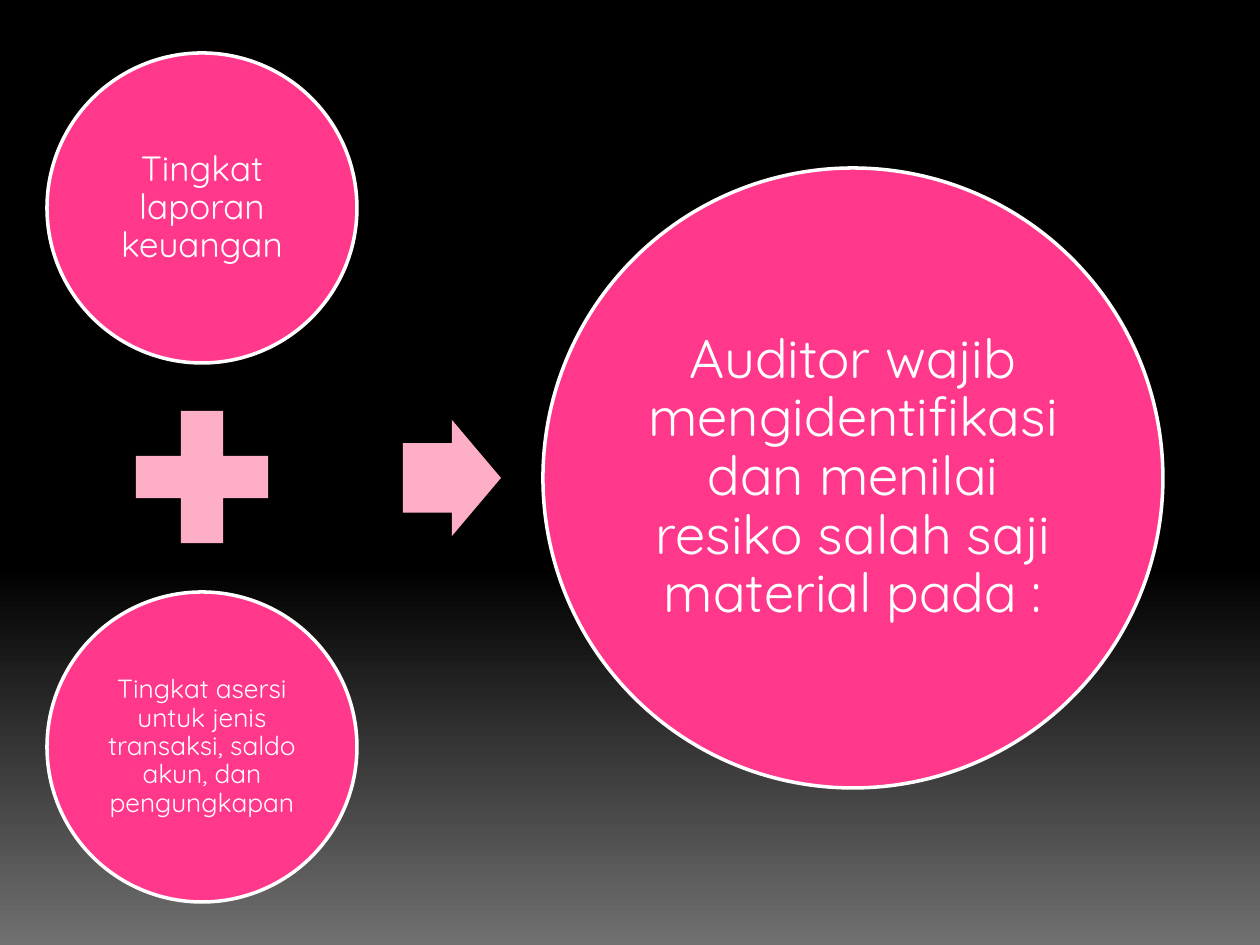
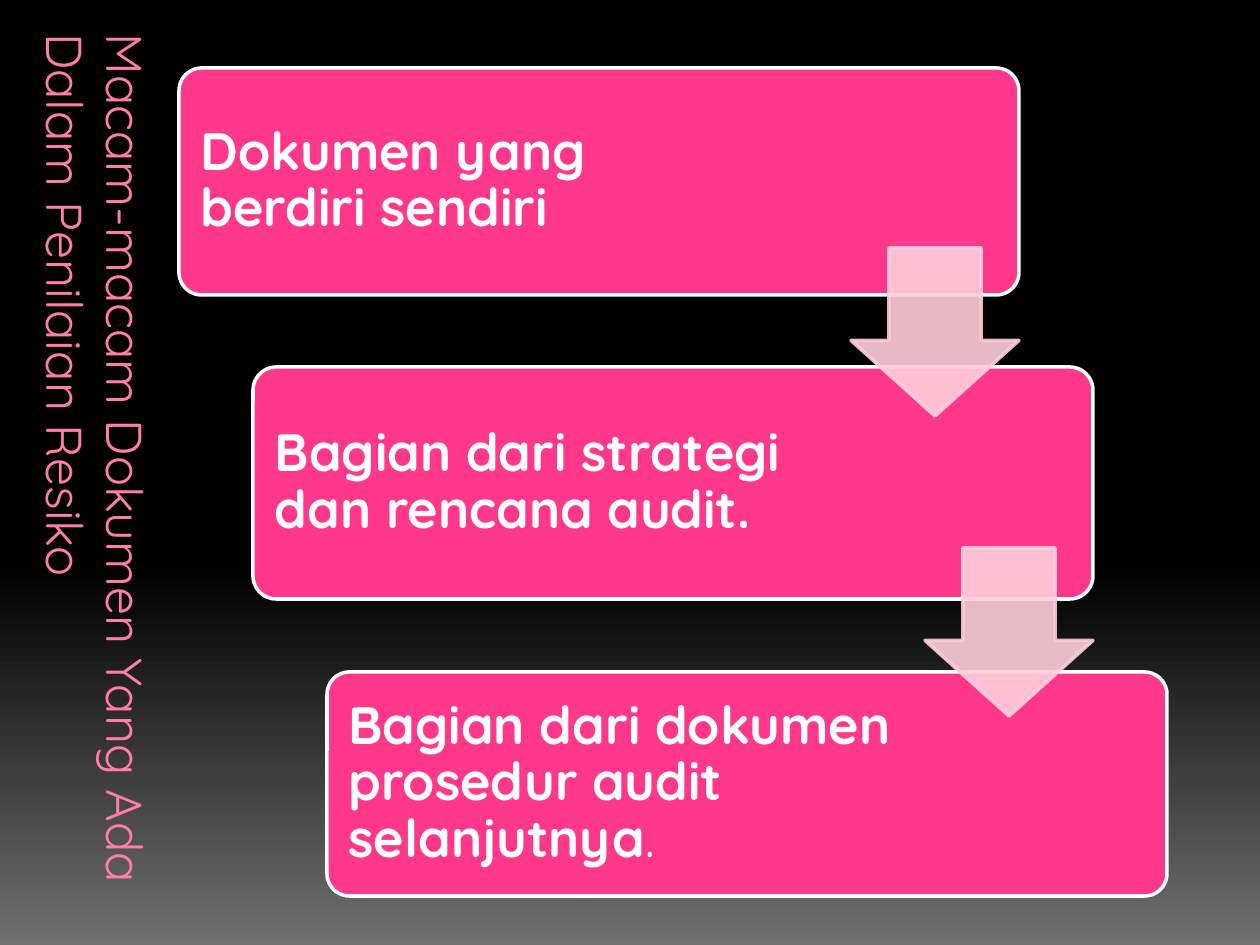
from lxml import etree
from pptx import Presentation
from pptx import util as u
from pptx.dml.color import RGBColor
from pptx.enum import shapes, text
from pptx.oxml import ns

SCALE = 914400 / 126
FONT = "Quicksand"
COLORS = {
    "black": "000000",
    "grey": "707070",
    "pink": "FF388C",
    "white": "FFFFFF",
    "operator": "FFAFC5",
    "down_arrow": "FFCEDA",
    "title": "FF7DA7",
    "title_outline": "B12761",
}
SHAPE = shapes.MSO_SHAPE


def px(n):
    return u.Emu(round(n * SCALE))


def rgb(name):
    return RGBColor.from_string(COLORS[name])


def add_slide(prs):
    """Add a blank slide that fades from black to grey at its foot."""
    s = prs.slides.add_slide(prs.slide_layouts[6])
    fill = s.background.fill
    fill.gradient()
    fill.gradient_angle = 270
    for stop, (position, color) in zip(fill.gradient_stops, [(0.6, "black"), (1, "grey")]):
        stop.position = position
        stop.color.rgb = rgb(color)
    return s


def add_shape(s, kind, x, y, w, h, fill, line=None, adj=()):
    sp = s.shapes.add_shape(kind, px(x), px(y), px(w), px(h))
    sp.shadow.inherit = False
    sp.fill.solid()
    sp.fill.fore_color.rgb = rgb(fill)
    if line:
        sp.line.color.rgb = rgb(line)
        sp.line.width = u.Pt(2)
    else:
        sp.line.fill.background()
    for i, value in enumerate(adj):
        sp.adjustments[i] = value
    return sp


def write(sp, runs, size, color, align, anchor, margins=None, spacing=None):
    """Fill a shape with one paragraph; runs are (text, bold) pairs."""
    tf = sp.text_frame
    tf.word_wrap = True
    tf.vertical_anchor = anchor
    if margins:
        tf.margin_left, tf.margin_top, tf.margin_right, tf.margin_bottom = map(px, margins)
    p = tf.paragraphs[0]
    p.alignment = align
    p.line_spacing = spacing
    for words, bold in runs:
        r = p.add_run()
        r.text = words
        r.font.name = FONT
        r.font.size = u.Pt(size)
        r.font.bold = bold
        r.font.color.rgb = rgb(color)
    return p


def add_circle(s, x, y, diameter, words, size, margin):
    sp = add_shape(s, SHAPE.OVAL, x, y, diameter, diameter, "pink", "white")
    write(sp, [(words, False)], size, "white", text.PP_ALIGN.CENTER,
          text.MSO_ANCHOR.MIDDLE, [margin] * 4, 0.9)


def add_step(s, x, y, w, h, runs, right_margin):
    sp = add_shape(s, SHAPE.ROUNDED_RECTANGLE, x, y, w, h, "pink", "white", [0.1])
    write(sp, runs, 30, "white", text.PP_ALIGN.LEFT,
          text.MSO_ANCHOR.MIDDLE, [15, 15, right_margin, 15], 0.9)


def add_down_arrow(s, x, y, size):
    sp = add_shape(s, SHAPE.DOWN_ARROW, x, y, size, size,
                   "down_arrow", "down_arrow", [0.55, 0.45])
    for color in sp.element.spPr.iter(ns.qn("a:srgbClr")):
        etree.SubElement(color, ns.qn("a:alpha"), val="90000")


def add_vertical_title(s, x, y, w, h, words):
    sp = s.shapes.add_textbox(px(x), px(y), px(w), px(h))
    p = write(sp, [(words, False)], 28.8, "title", text.PP_ALIGN.LEFT,
              text.MSO_ANCHOR.BOTTOM)
    sp.element.txBody.bodyPr.set("vert", "vert")
    ln = etree.Element(ns.qn("a:ln"), w=str(u.Pt(0.5)))
    fill = etree.SubElement(ln, ns.qn("a:solidFill"))
    etree.SubElement(fill, ns.qn("a:srgbClr"), val=COLORS["title_outline"])
    p.runs[0].font.fill  # the outline goes ahead of the fill
    p.runs[0]._r.rPr.insert(0, ln)


def build_risk_levels(prs):
    s = add_slide(prs)
    add_circle(s, 47, 53, 310, "Tingkat laporan keuangan", 20, 4)
    add_shape(s, SHAPE.MATH_PLUS, 112, 387, 180, 180, "operator")
    add_circle(s, 47, 592, 310,
               "Tingkat asersi untuk jenis transaksi, saldo akun, dan pengungkapan", 15, 3)
    add_shape(s, SHAPE.RIGHT_ARROW, 403, 420, 98, 116, "operator", adj=[0.6, 0.5])
    add_circle(s, 543, 168, 620,
               "Auditor wajib mengidentifikasi dan menilai resiko salah saji material pada :",
               31, 5)


def build_document_kinds(prs):
    s = add_slide(prs)
    add_vertical_title(s, 30, 21, 149, 882,
                       "Macam-macam Dokumen Yang Ada Dalam Penilaian Resiko")
    left, indent, width, arrow = 179, 74, 840, 168
    steps = [
        (68, 227, 280, [("Dokumen yang berdiri sendiri", True)]),
        (367, 232, 258, [("Bagian dari strategi dan rencana audit.", True)]),
        (672, 224, 258, [("Bagian dari dokumen prosedur audit selanjutnya", True),
                         (".", False)]),
    ]
    for i, (top, height, right_margin, runs) in enumerate(steps):
        add_step(s, left + i * indent, top, width, height, runs, right_margin)
    for i in range(len(steps) - 1):
        add_down_arrow(s, left + i * indent + width - arrow, 248 + i * 300, arrow)


def main():
    prs = Presentation()
    prs.slide_width, prs.slide_height = px(1260), px(945)
    build_risk_levels(prs)
    build_document_kinds(prs)
    prs.save("out.pptx")


if __name__ == "__main__":
    main()
